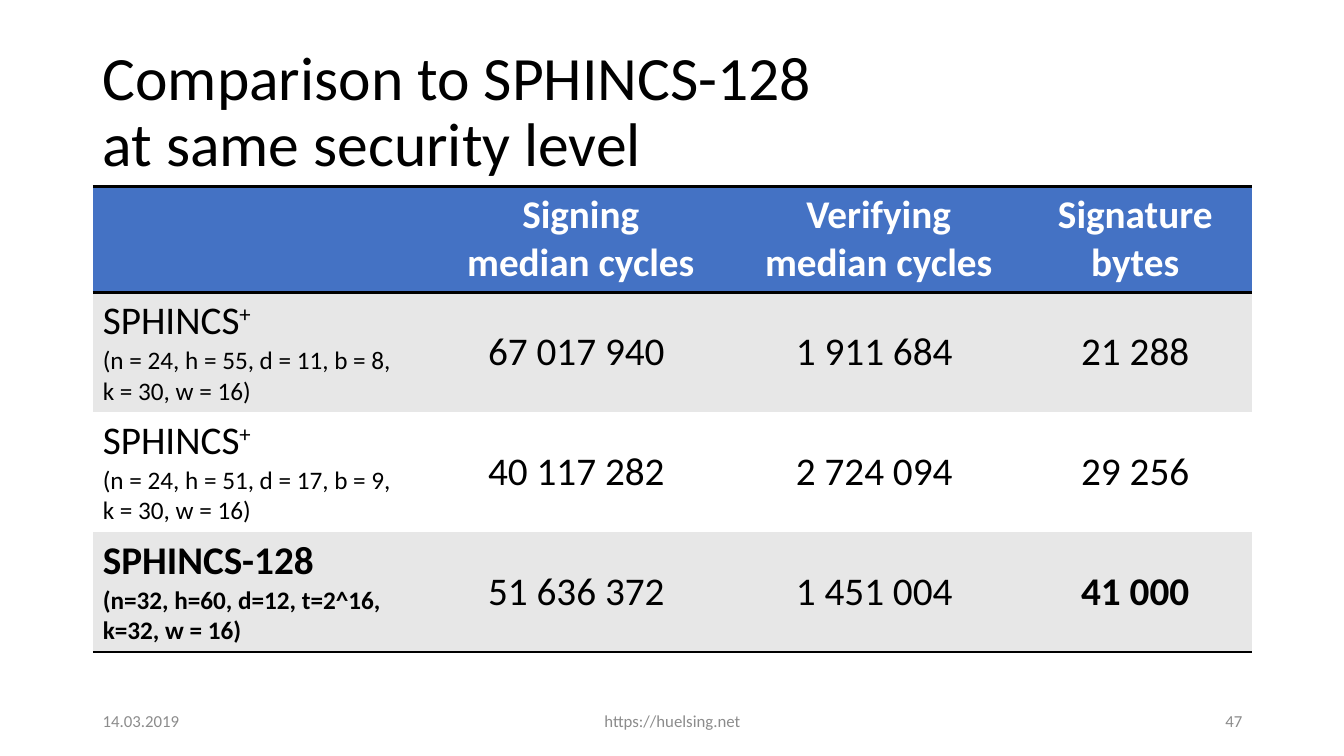
from lxml import etree
from pptx import Presentation
from pptx import util as u
from pptx.dml.color import RGBColor
from pptx.enum import text
from pptx.oxml.ns import qn

PX = 9144  # EMU per px, 100 px to the inch
FONT = "Calibri"
COLORS = {"ink": "000000", "white": "FFFFFF", "header": "4472C4",
          "band": "E7E7E7", "footer": "8C8C8C"}
LEFT, CENTER, RIGHT = text.PP_ALIGN.LEFT, text.PP_ALIGN.CENTER, text.PP_ALIGN.RIGHT
TOP, MIDDLE = text.MSO_ANCHOR.TOP, text.MSO_ANCHOR.MIDDLE
NO_GRID_STYLE = "{2D5ABB26-0587-4C30-8999-92F81FD0307C}"

COLUMNS = [327, 314, 277, 232]
ROWS = [105, 119, 119, 119]
HEADINGS = ["", "Signing\nmedian cycles", "Verifying\nmedian cycles", "Signature\nbytes"]
SCHEMES = [
    ("SPHINCS", "+", "(n = 24, h = 55, d = 11, b = 8,\nk = 30, w = 16)",
     ["67 017 940 ", "1 911 684 ", "21 288"]),
    ("SPHINCS", "+", "(n = 24, h = 51, d = 17, b = 9,\nk = 30, w = 16)",
     ["40 117 282 ", "2 724 094 ", "29 256"]),
    ("SPHINCS-128", "", "(n=32, h=60, d=12, t=2^16, k=32, w = 16)",
     ["51 636 372 ", "1 451 004 ", "41 000"]),
]


def px(n):
    return u.Emu(n * PX)


def rgb(name):
    return RGBColor.from_string(COLORS[name])


def write(p, words, size=28, color="ink", bold=False, raised=False):
    """Append words to a paragraph, turning newlines into line breaks."""
    for i, line in enumerate(words.split("\n")):
        if i:
            p.add_line_break()
        if not line:
            continue
        r = p.add_run()
        r.text = line
        f = r.font
        f.name, f.size, f.bold = FONT, u.Pt(size), bold
        f.color.rgb = rgb(color)
        if raised:
            r._r.get_or_add_rPr().set("baseline", "30000")


def add_text(s, x, y, w, h, words, align=LEFT, spacing=1.0, **fmt):
    tf = s.shapes.add_textbox(px(x), px(y), px(w), px(h)).text_frame
    tf.word_wrap = True
    tf.vertical_anchor = MIDDLE
    p = tf.paragraphs[0]
    p.alignment, p.line_spacing = align, spacing
    write(p, words, **fmt)


def style_cell(cell, fill, edges=(), align=CENTER, anchor=MIDDLE):
    """Set fill, anchor and black edges (lnT, lnB); return the cell's paragraph."""
    cell.fill.solid()
    cell.fill.fore_color.rgb = rgb(fill)
    cell.vertical_anchor = anchor
    tcPr = cell._tc.get_or_add_tcPr()
    for i, edge in enumerate(edges):
        ln = etree.Element(qn(f"a:{edge}"), w=str(u.Pt(2)))
        solid = etree.SubElement(ln, qn("a:solidFill"))
        etree.SubElement(solid, qn("a:srgbClr"), val=COLORS["ink"])
        tcPr.insert(i, ln)
    p = cell.text_frame.paragraphs[0]
    p.alignment = align
    return p


def add_comparison(s, x, y):
    frame = s.shapes.add_table(len(ROWS), len(COLUMNS), px(x), px(y),
                               px(sum(COLUMNS)), px(sum(ROWS)))
    table = frame.table
    table.horz_banding = False
    table._tbl.tblPr.find(qn("a:tableStyleId")).text = NO_GRID_STYLE
    for column, width in zip(table.columns, COLUMNS):
        column.width = px(width)
    for row, height in zip(table.rows, ROWS):
        row.height = px(height)

    for c, heading in enumerate(HEADINGS):
        p = style_cell(table.cell(0, c), "header", ("lnT", "lnB"), anchor=TOP)
        write(p, heading, color="white", bold=True)

    for i, (name, mark, parameters, values) in enumerate(SCHEMES, 1):
        last = i == len(SCHEMES)
        fill = "band" if i % 2 else "white"
        edges = ("lnB",) if last else ()
        p = style_cell(table.cell(i, 0), fill, edges, LEFT, TOP)
        write(p, name, bold=last)
        write(p, mark, raised=True)
        write(p, "\n" + parameters, size=18, bold=last)
        for c, value in enumerate(values, 1):
            p = style_cell(table.cell(i, c), fill, edges)
            write(p, value, bold=last and c == len(values))


def main():
    prs = Presentation()
    prs.slide_width, prs.slide_height = u.Inches(13.33), u.Inches(7.5)
    s = prs.slides.add_slide(prs.slide_layouts[6])
    add_text(s, 92, 40, 1023, 145, "Comparison to SPHINCS-128\nat same security level",
             spacing=0.9, size=44)
    for x, w, words, align in [(92, 300, "14.03.2019", LEFT),
                               (442, 450, "https://huelsing.net", CENTER),
                               (942, 300, "47", RIGHT)]:
        add_text(s, x, 695, w, 40, words, align, size=12, color="footer")
    add_comparison(s, 92, 185)
    prs.save("out.pptx")


if __name__ == "__main__":
    main()
